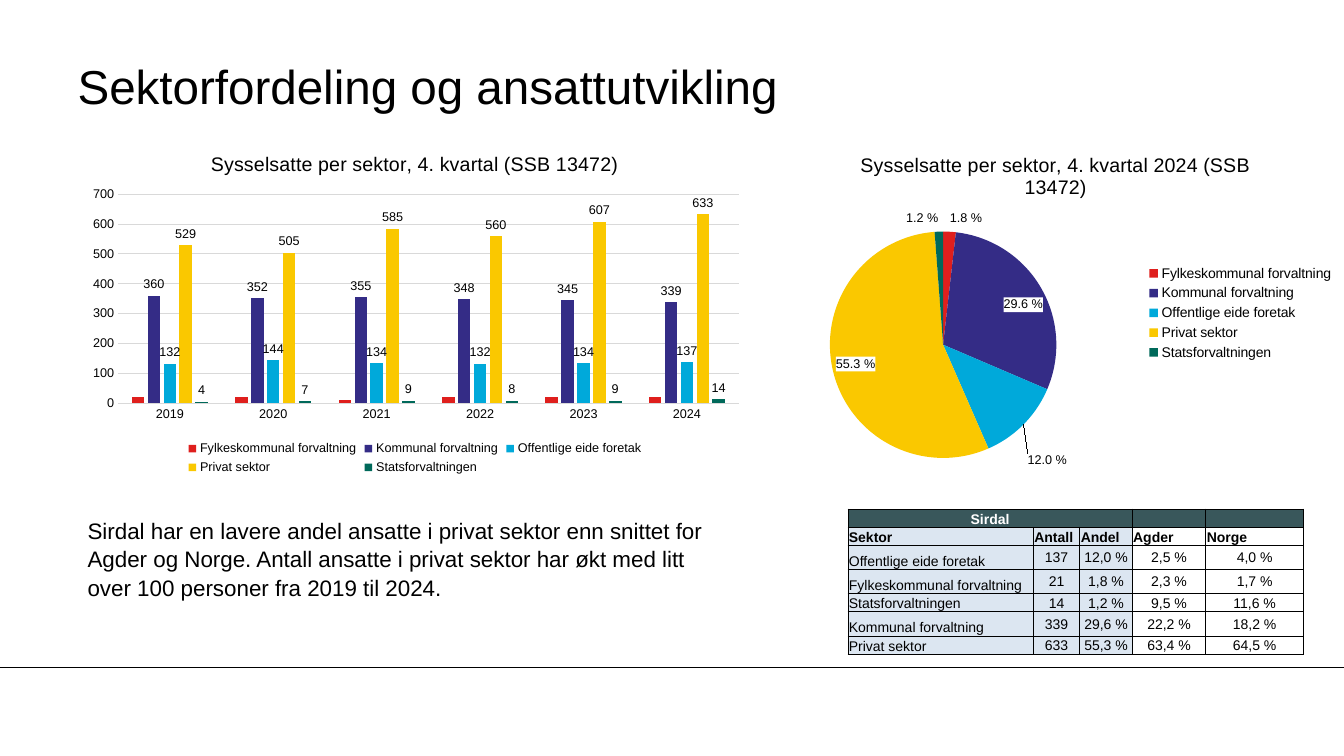
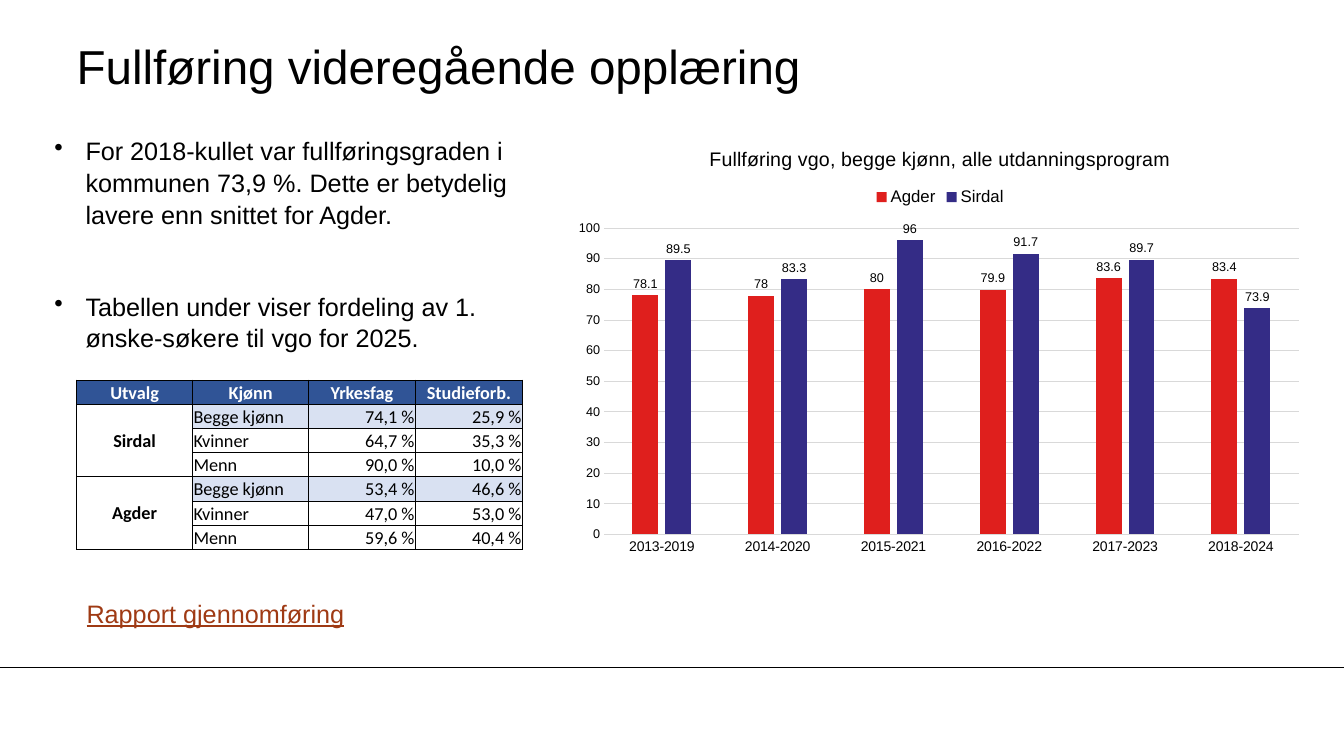
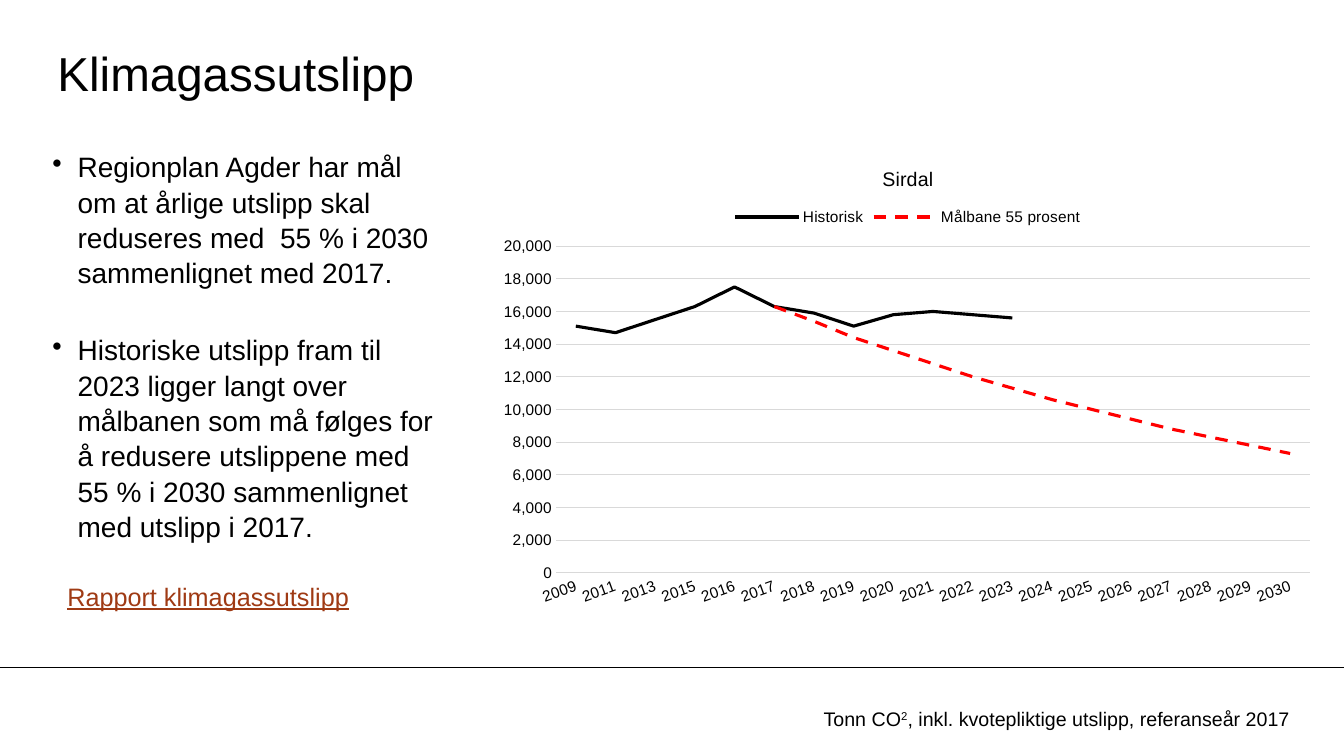
import copy

import pptx
import pptx.chart.data
import pptx.dml.color
import pptx.enum.chart
import pptx.enum.dml
import pptx.enum.shapes
import pptx.enum.text
import pptx.oxml
import pptx.oxml.ns
import pptx.util
from lxml import etree

Inches, Pt = pptx.util.Inches, pptx.util.Pt
qn = pptx.oxml.ns.qn
XL = pptx.enum.chart.XL_CHART_TYPE
LEGEND = pptx.enum.chart.XL_LEGEND_POSITION
LABEL = pptx.enum.chart.XL_LABEL_POSITION
ANCHOR = pptx.enum.text.MSO_ANCHOR
ALIGN = {"l": pptx.enum.text.PP_ALIGN.LEFT, "c": pptx.enum.text.PP_ALIGN.CENTER,
         "r": pptx.enum.text.PP_ALIGN.RIGHT}

FONT = "Arial"
BLACK, WHITE, GRID, LINK = "000000", "FFFFFF", "D9D9D9", "9F3A14"
RED, INDIGO, CYAN, YELLOW, GREEN = "DF1F1D", "342C86", "00A9DA", "FAC800", "00695A"
TARGET_RED = "FF0000"
SLIDE_W, SLIDE_H, FOOTER_Y = 13.33, 7.5, 6.62
LINE_SPACING = 1.05

SECTOR_YEARS = ["2019", "2020", "2021", "2022", "2023", "2024"]
# name, values, colour, number format of the labels
SECTORS = [
    ("Fylkeskommunal forvaltning", [20, 20, 10, 20, 20, 20], RED, None),
    ("Kommunal forvaltning", [360, 352, 355, 348, 345, 339], INDIGO, "#,##0"),
    ("Offentlige eide foretak", [132, 144, 134, 132, 134, 137], CYAN, "#,##0"),
    ("Privat sektor", [529, 505, 585, 560, 607, 633], YELLOW, "#,##0"),
    ("Statsforvaltningen", [4, 7, 9, 8, 9, 14], GREEN, "#,##0"),
]
SECTOR_SHARES = [1.8, 29.6, 12, 55.3, 1.2]
SECTOR_TEXT = ("Sirdal har en lavere andel ansatte i privat sektor enn snittet for Agder og "
               "Norge. Antall ansatte i privat sektor har økt med litt over 100 personer "
               "fra 2019 til 2024.")
SECTOR_TABLE = [
    ["Sirdal", "", "", "", ""],
    ["Sektor", "Antall", "Andel", "Agder", "Norge"],
    ["Offentlige eide foretak", "137", "12,0 %", "2,5 %", "4,0 %"],
    ["Fylkeskommunal forvaltning", "21", "1,8 %", "2,3 %", "1,7 %"],
    ["Statsforvaltningen", "14", "1,2 %", "9,5 %", "11,6 %"],
    ["Kommunal forvaltning", "339", "29,6 %", "22,2 %", "18,2 %"],
    ["Privat sektor", "633", "55,3 %", "63,4 %", "64,5 %"],
]

SCHOOL_BULLETS = [
    "For 2018-kullet var fullføringsgraden i kommunen 73,9 %. Dette er betydelig lavere "
    "enn snittet for Agder.",
    "Tabellen under viser fordeling av 1. ønske-søkere til vgo for 2025.",
]
SCHOOL_TABLE = [
    ["Utvalg", "Kjønn", "Yrkesfag", "Studieforb."],
    ["Sirdal", "Begge kjønn", "74,1 %", "25,9 %"],
    ["", "Kvinner", "64,7 %", "35,3 %"],
    ["", "Menn", "90,0 %", "10,0 %"],
    ["Agder", "Begge kjønn", "53,4 %", "46,6 %"],
    ["", "Kvinner", "47,0 %", "53,0 %"],
    ["", "Menn", "59,6 %", "40,4 %"],
]
COHORTS = ["2013-2019", "2014-2020", "2015-2021", "2016-2022", "2017-2023", "2018-2024"]
COMPLETION = [
    ("Agder", [78.1, 78, 80, 79.9, 83.6, 83.4], RED, "General"),
    ("Sirdal", [89.5, 83.3, 96, 91.7, 89.7, 73.9], INDIGO, "General"),
]

CLIMATE_BULLETS = [
    "Regionplan Agder har mål om at årlige utslipp skal reduseres med  55 % i 2030 "
    "sammenlignet med 2017.",
    "Historiske utslipp fram til 2023 ligger langt over målbanen som må følges for å "
    "redusere utslippene med 55 % i 2030 sammenlignet med utslipp i 2017.",
]
EMISSION_YEARS = ["2009", "2011", "2013"] + [str(year) for year in range(2015, 2031)]
EMISSIONS = [
    ("Historisk", [15100, 14700, 15500, 16300, 17500, 16300, 15900, 15100, 15800, 16000,
                   15800, 15600] + [None] * 7, BLACK, None),
    ("Målbane 55 prosent", [None] * 5 + [16300, 15400, 14400, 13600, 12800, 12000, 11300,
                                         10600, 10000, 9400, 8800, 8300, 7800, 7300],
     TARGET_RED, None),
]
EMISSION_NOTE = [("Tonn CO", {}), ("2", {"baseline": "30000"}),
                 (", inkl. kvotepliktige utslipp, referanseår 2017", {})]


def rgb(color):
    return pptx.dml.color.RGBColor.from_string(color)


def set_font(font, size, color=BLACK, **values):
    font.color.rgb = rgb(color)
    for name, value in {"name": FONT, "size": Pt(size), **values}.items():
        setattr(font, name, value)


def set_fill(fill, color):
    if color:
        fill.solid()
        fill.fore_color.rgb = rgb(color)
    else:
        fill.background()


def set_line(line, color, width):
    line.color.rgb = rgb(color)
    line.width = Pt(width)


def add_text(s, box, paragraphs, size, inset=None, anchor=ANCHOR.TOP, indent=0, gap=0,
             spacing=LINE_SPACING, **values):
    """Each paragraph is a string or a list of (text, run attributes); an indent adds bullets."""
    tf = s.shapes.add_textbox(*map(Inches, box)).text_frame
    tf.word_wrap = True
    tf.vertical_anchor = anchor
    if inset is not None:
        for side in ("left", "top", "right", "bottom"):
            setattr(tf, f"margin_{side}", Inches(inset))
    for i, runs in enumerate(paragraphs):
        p = tf.paragraphs[0] if i == 0 else tf.add_paragraph()
        if indent:
            pPr = p._p.get_or_add_pPr()
            pPr.set("marL", str(Inches(indent)))
            pPr.set("indent", str(-Inches(indent)))
            etree.SubElement(pPr, qn("a:buChar"), char="•")
        p.line_spacing = spacing
        if i:
            p.space_before = Pt(gap)
        for text, attributes in [(runs, {})] if isinstance(runs, str) else runs:
            r = p.add_run()
            r.text = text
            set_font(r.font, size, **values)
            for name, value in attributes.items():
                r._r.get_or_add_rPr().set(name, value)


def add_link(s, box, text):
    add_text(s, box, [text], 18, color=LINK, underline=True)


def new_slide(prs, title, left, top):
    s = prs.slides.add_slide(prs.slide_layouts[6])
    rule = s.shapes.add_connector(pptx.enum.shapes.MSO_CONNECTOR.STRAIGHT, 0,
                                  Inches(FOOTER_Y), Inches(SLIDE_W), Inches(FOOTER_Y))
    set_line(rule.line, BLACK, 0.75)
    etree.SubElement(rule._element.spPr, qn("a:effectLst"))
    add_text(s, (left, top, 11.1, 0.75), [title], 34, inset=0, anchor=ANCHOR.MIDDLE, spacing=1)
    return s


def add_borders(cell):
    tcPr = cell._tc.get_or_add_tcPr()
    for i, side in enumerate(("lnL", "lnR", "lnT", "lnB")):
        ln = etree.Element(qn(f"a:{side}"), w=str(Pt(0.5)))
        fill = etree.SubElement(ln, qn("a:solidFill"))
        etree.SubElement(fill, qn("a:srgbClr"), val=BLACK)
        tcPr.insert(i, ln)


def add_table(s, left, top, rows, widths, heights, merges, size, cell_style, font=FONT):
    """cell_style(row, column) gives fill, text colour, bold, alignment and anchor."""
    box = map(Inches, (left, top, sum(widths), sum(heights)))
    table = s.shapes.add_table(len(rows), len(widths), *box).table
    table.first_row = table.horz_banding = False
    for parts, name, lengths in ((table.columns, "width", widths),
                                 (table.rows, "height", heights)):
        for part, length in zip(parts, lengths):
            setattr(part, name, Inches(length))
    for y, row in enumerate(rows):
        for x, text in enumerate(row):
            cell = table.cell(y, x)
            fill, color, bold, align, anchor = cell_style(y, x)
            margins = {"left": 0.01, "right": 0.01, "top": 0.01, "bottom": 0}
            for side, margin in margins.items():
                setattr(cell, f"margin_{side}", Inches(margin))
            cell.vertical_anchor = anchor
            set_fill(cell.fill, fill)
            add_borders(cell)
            p = cell.text_frame.paragraphs[0]
            p.alignment = ALIGN[align]
            if text:
                r = p.add_run()
                r.text = text
                set_font(r.font, size, color, bold=bold, name=font)
            else:
                etree.SubElement(p._p, qn("a:endParaRPr"), sz=str(size * 100))
    for first, last in merges:
        table.cell(*first).merge(table.cell(*last))


def sector_cell(y, x):
    if y == 0:
        return "39575B", WHITE, True, "c", ANCHOR.BOTTOM
    fill = "DCE6F1" if x < 3 else None
    if y == 1 or x == 0:
        return fill, BLACK, y == 1, "l", ANCHOR.BOTTOM
    return fill, BLACK, False, "c", ANCHOR.MIDDLE


def school_cell(y, x):
    if y == 0:
        return "305496", WHITE, True, "c", ANCHOR.BOTTOM
    if x == 0:
        return WHITE, BLACK, True, "c", ANCHOR.MIDDLE
    fill = "D9E1F2" if y % 3 == 1 else WHITE
    return fill, BLACK, False, "l" if x == 1 else "r", ANCHOR.BOTTOM


def set_plot_area(chart, x, y, w, h):
    """Place the inner plot area, in fractions of the chart."""
    area = chart._chartSpace.chart.plotArea
    for old in area.findall(qn("c:layout")):
        area.remove(old)
    layout = etree.Element(qn("c:layout"))
    manual = etree.SubElement(layout, qn("c:manualLayout"))
    for name, value in (("layoutTarget", "inner"), ("xMode", "edge"), ("yMode", "edge"),
                        ("x", x), ("y", y), ("w", w), ("h", h)):
        etree.SubElement(manual, qn(f"c:{name}"), val=str(value))
    area.insert(0, layout)


def add_chart(s, kind, box, title, cats, series, legend, legend_size, plot):
    data = pptx.chart.data.CategoryChartData()
    data.categories = cats
    for name, values, *_ in series:
        data.add_series(name, values)
    chart = s.shapes.add_chart(kind, *map(Inches, box), data).chart
    set_font(chart.font, 10)
    chart.has_title = True
    tf = chart.chart_title.text_frame
    tf.text = title
    set_font(tf.paragraphs[0].runs[0].font, 14, bold=False)
    chart.chart_title.include_in_layout = False
    chart.has_legend = True
    chart.legend.position = legend
    chart.legend.include_in_layout = False
    set_font(chart.legend.font, legend_size)
    chart.plots[0].vary_by_categories = kind == XL.PIE
    set_plot_area(chart, *plot)
    return chart


def set_axes(chart, cat_size, val_size, top, step):
    tick = pptx.enum.chart.XL_TICK_MARK.NONE
    for axis, size in ((chart.category_axis, cat_size), (chart.value_axis, val_size)):
        axis.major_tick_mark = axis.minor_tick_mark = tick
        set_font(axis.tick_labels.font, size)
    set_line(chart.category_axis.format.line, GRID, 0.75)
    axis = chart.value_axis
    axis.format.line.fill.background()
    set_line(axis.major_gridlines.format.line, GRID, 0.75)
    axis.minimum_scale, axis.maximum_scale, axis.major_unit = 0, top, step
    axis.tick_labels.number_format = "#,##0"
    axis.tick_labels.number_format_is_linked = False


def show_values(labels, number_format, position):
    labels.show_value = True
    labels.number_format = number_format
    labels.number_format_is_linked = False
    labels.position = position
    set_font(labels.font, 9)


def add_columns(s, box, title, cats, series, legend, legend_size, plot, cat_size, top, step):
    chart = add_chart(s, XL.COLUMN_CLUSTERED, box, title, cats, series, legend,
                      legend_size, plot)
    set_axes(chart, cat_size, 9, top, step)
    chart.plots[0].gap_width, chart.plots[0].overlap = 219, -27
    for ser, (_, _, color, number_format) in zip(chart.plots[0].series, series):
        set_fill(ser.format.fill, color)
        ser.invert_if_negative = False
        if number_format:
            show_values(ser.data_labels, number_format, LABEL.OUTSIDE_END)


def add_sector_pie(s):
    chart = add_chart(s, XL.PIE, (7.61, 1.35, 5.72, 3.51),
                      "Sysselsatte per sektor, 4. kvartal 2024 (SSB 13472)",
                      [sector[0] for sector in SECTORS], [("Andel", SECTOR_SHARES)],
                      LEGEND.RIGHT, 10, (0.1, 0.27, 0.41, 0.64))
    ser = chart.plots[0].series[0]
    for i, sector in enumerate(SECTORS):
        set_fill(ser.points[i].format.fill, sector[2])
    show_values(ser.data_labels, '0.0" %"', LABEL.BEST_FIT)
    dLbls = ser.data_labels._element
    spPr = etree.Element(qn("c:spPr"))
    fill = etree.SubElement(spPr, qn("a:solidFill"))
    etree.SubElement(fill, qn("a:srgbClr"), val=WHITE)
    dLbls.find(qn("c:txPr")).addprevious(spPr)
    # Offentlige eide foretak has its label below the pie
    dLbl = etree.Element(qn("c:dLbl"))
    etree.SubElement(dLbl, qn("c:idx"), val="2")
    manual = etree.SubElement(etree.SubElement(dLbl, qn("c:layout")), qn("c:manualLayout"))
    for name, value in (("x", "0"), ("y", "0.07")):
        etree.SubElement(manual, qn(f"c:{name}"), val=value)
    for child in dLbls:
        if child.tag != qn("c:showLeaderLines"):
            dLbl.append(copy.deepcopy(child))
    dLbl.find(qn("c:dLblPos")).set("val", "outEnd")
    dLbls.insert(0, dLbl)


def add_emission_lines(s):
    chart = add_chart(s, XL.LINE, (4.85, 1.47, 8.31, 4.63), "Sirdal", EMISSION_YEARS,
                      EMISSIONS, LEGEND.TOP, 11, (0.08, 0.21, 0.9, 0.7))
    set_axes(chart, 11, 11, 20000, 2000)
    body = chart.category_axis._element.find(qn("c:txPr")).find(qn("a:bodyPr"))
    body.set("rot", str(-20 * 60000))
    for ser, (_, _, color, _) in zip(chart.plots[0].series, EMISSIONS):
        set_line(ser.format.line, color, 2.25)
        ser.smooth = False
        ser.marker.style = pptx.enum.chart.XL_MARKER_STYLE.NONE
    ser.format.line.dash_style = pptx.enum.dml.MSO_LINE.DASH


def sector_slide(prs):
    s = new_slide(prs, "Sektorfordeling og ansattutvikling", 0.77, 0.47)
    add_text(s, (0.77, 5.07, 6.41, 0.91), [SECTOR_TEXT], 16)
    low, high = 0.18, 0.24
    add_table(s, 8.41, 5.05, SECTOR_TABLE, [1.84, 0.46, 0.52, 0.73, 0.97],
              [low, low, high, high, low, high, low], [((0, 0), (0, 2))], 10, sector_cell)
    add_columns(s, (0.77, 1.35, 6.69, 3.4), "Sysselsatte per sektor, 4. kvartal (SSB 13472)",
                SECTOR_YEARS, SECTORS, LEGEND.BOTTOM, 9, (0.06, 0.17, 0.92, 0.61), 9, 700, 100)
    add_sector_pie(s)


def school_slide(prs):
    s = new_slide(prs, "Fullføring videregående opplæring", 0.76, 0.27)
    add_text(s, (0.44, 1.28, 5.17, 2.22), SCHOOL_BULLETS, 18, indent=0.31, gap=43)
    add_table(s, 0.76, 3.77, SCHOOL_TABLE, [1.15, 1.15, 1.06, 1.06], [0.24] * 7,
              [((1, 0), (3, 0)), ((4, 0), (6, 0))], 13, school_cell, "Calibri")
    add_link(s, (0.76, 5.87, 2.81, 0.4), "Rapport gjennomføring")
    add_columns(s, (5.62, 1.28, 7.41, 4.28),
                "Fullføring vgo, begge kjønn, alle utdanningsprogram", COHORTS, COMPLETION,
                LEGEND.TOP, 12, (0.05, 0.23, 0.93, 0.71), 10, 100, 10)


def climate_slide(prs):
    s = new_slide(prs, "Klimagassutslipp", 0.57, 0.34)
    add_text(s, (0.52, 1.47, 3.86, 3.99), CLIMATE_BULLETS, 20, inset=0, indent=0.25, gap=30)
    add_text(s, (8.07, 6.95, 5.09, 0.34), [EMISSION_NOTE], 14)
    add_link(s, (0.57, 5.7, 3.16, 0.4), "Rapport klimagassutslipp")
    add_emission_lines(s)


def main():
    prs = pptx.Presentation()
    prs.slide_width, prs.slide_height = Inches(SLIDE_W), Inches(SLIDE_H)
    for build in (sector_slide, school_slide, climate_slide):
        build(prs)
    prs.save("out.pptx")


if __name__ == "__main__":
    main()
